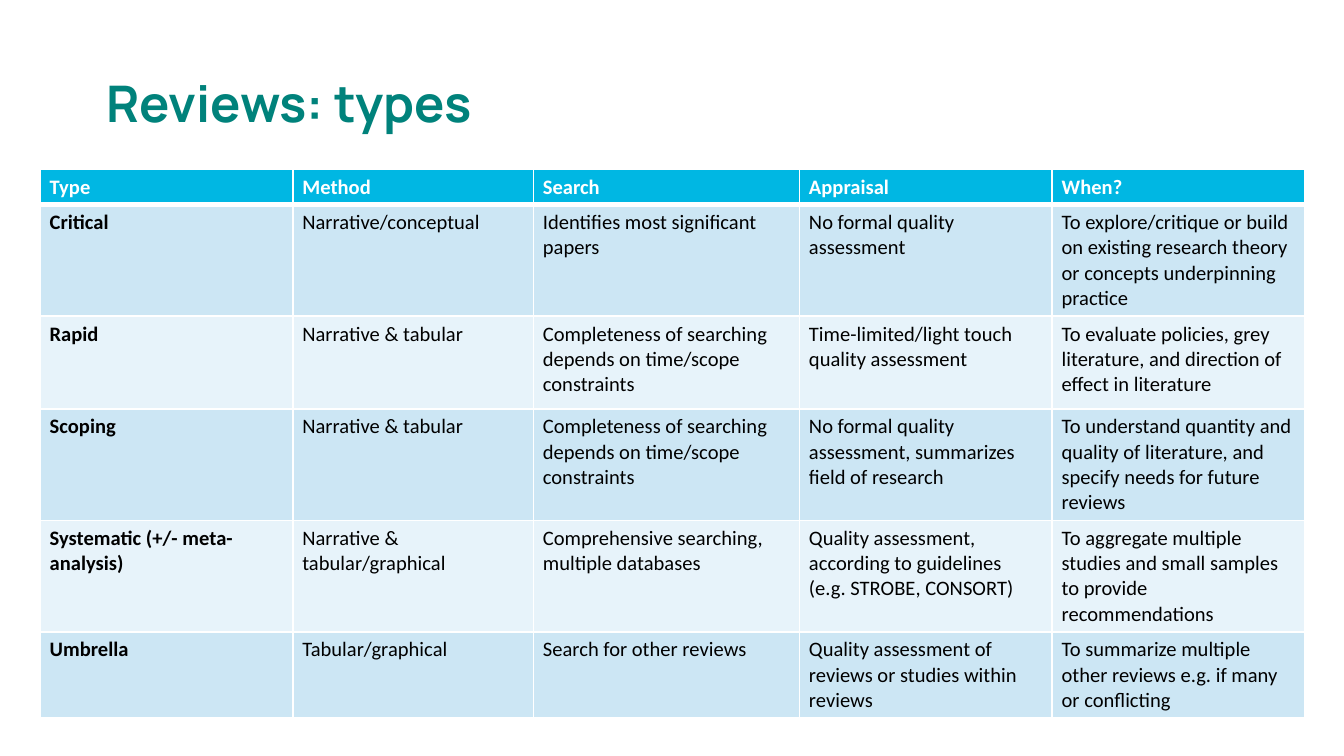
"""Build a slide that compares the types of literature review in a table."""
from dataclasses import dataclass

import pptx
import pptx.dml.color
import pptx.enum.text
import pptx.oxml.ns
import pptx.util
from lxml import etree
from pptx.util import Inches


@dataclass(frozen=True)
class Theme:
    title_font: str = "Manrope"
    table_font: str = "Calibri"
    title_size: float = 27
    table_size: float = 11
    title: str = "00827B"
    header: str = "00B7E3"
    bands: tuple = ("CCE6F4", "E7F3FA")
    light: str = "FFFFFF"
    dark: str = "000000"
    thin: float = 1
    thick: float = 3


THEME = Theme()
SLIDE_WIDTH = 10
SLIDE_HEIGHT = SLIDE_WIDTH * 9 / 16
COLUMN_WIDTHS = (1.88, 1.79, 1.98, 1.88, 1.88)
ROW_HEIGHTS = (0.25, 0.78, 0.69, 0.78, 0.82, 0.6)
SIDE_MARGIN = Inches(0.07)
END_MARGIN = pptx.util.Pt(2.7)
REVIEWS = (
    ("Type", "Method", "Search", "Appraisal", "When?"),
    ("Critical", "Narrative/conceptual", "Identifies most significant papers",
     "No formal quality assessment",
     "To explore/critique or build on existing research theory or concepts underpinning practice"),
    ("Rapid", "Narrative & tabular",
     "Completeness of searching depends on time/scope constraints",
     "Time-limited/light touch quality assessment",
     "To evaluate policies, grey literature, and direction of effect in literature"),
    ("Scoping", "Narrative & tabular",
     "Completeness of searching depends on time/scope constraints",
     "No formal quality assessment, summarizes field of research",
     "To understand quantity and quality of literature, and specify needs for future reviews"),
    ("Systematic (+/- meta-analysis)", "Narrative & tabular/graphical",
     "Comprehensive searching, multiple databases",
     "Quality assessment, according to guidelines (e.g. STROBE, CONSORT)",
     "To aggregate multiple studies and small samples to provide recommendations"),
    ("Umbrella", "Tabular/graphical", "Search for other reviews",
     "Quality assessment of reviews or studies within reviews",
     "To summarize multiple other reviews e.g. if many or conflicting"),
)


def set_attributes(target, values):
    for name, value in values.items():
        setattr(target, name, value)


def rgb(color):
    return pptx.dml.color.RGBColor.from_string(color)


def format_font(font, name, size, color, bold):
    set_attributes(font, {"name": name, "size": pptx.util.Pt(size), "bold": bold})
    font.color.rgb = rgb(color)


def add_title(slide, text):
    title = slide.shapes.title
    set_attributes(title, {"left": Inches(0.69), "top": Inches(0.45),
                           "width": Inches(8.62), "height": Inches(0.68)})
    frame = title.text_frame
    set_attributes(frame, {"text": text, "word_wrap": True,
                           "auto_size": pptx.enum.text.MSO_AUTO_SIZE.NONE,
                           "vertical_anchor": pptx.enum.text.MSO_ANCHOR.MIDDLE})
    paragraph = frame.paragraphs[0]
    set_attributes(paragraph, {"alignment": pptx.enum.text.PP_ALIGN.LEFT, "line_spacing": 0.9})
    format_font(paragraph.runs[0].font, THEME.title_font, THEME.title_size, THEME.title, True)


def add_borders(cell, widths):
    properties = cell._tc.get_or_add_tcPr()
    qualified = pptx.oxml.ns.qn
    for side, width in widths.items():
        line = etree.SubElement(properties, qualified(f"a:ln{side}"), w=str(pptx.util.Pt(width)))
        fill = etree.SubElement(line, qualified("a:solidFill"))
        etree.SubElement(fill, qualified("a:srgbClr"), val=THEME.light)


def format_cell(cell, text, row, column):
    is_header = row == 0
    set_attributes(cell, {"text": text,
                          "margin_left": SIDE_MARGIN, "margin_right": SIDE_MARGIN,
                          "margin_top": END_MARGIN, "margin_bottom": END_MARGIN})
    add_borders(cell, {"L": THEME.thin, "R": THEME.thin,
                       "T": THEME.thick if row == 1 else THEME.thin,
                       "B": THEME.thick if is_header else THEME.thin})
    cell.fill.solid()
    cell.fill.fore_color.rgb = rgb(THEME.header if is_header else THEME.bands[(row - 1) % 2])
    format_font(cell.text_frame.paragraphs[0].runs[0].font, THEME.table_font, THEME.table_size,
                THEME.light if is_header else THEME.dark, is_header or column == 0)


def add_review_table(slide):
    table = slide.shapes.add_table(
        len(REVIEWS), len(COLUMN_WIDTHS), Inches(0.3), Inches(1.26),
        Inches(sum(COLUMN_WIDTHS)), Inches(sum(ROW_HEIGHTS))).table
    for column, width in zip(table.columns, COLUMN_WIDTHS):
        column.width = Inches(width)
    for row, height in zip(table.rows, ROW_HEIGHTS):
        row.height = Inches(height)
    for row, texts in enumerate(REVIEWS):
        for column, text in enumerate(texts):
            format_cell(table.cell(row, column), text, row, column)


def main():
    presentation = pptx.Presentation()
    set_attributes(presentation, {"slide_width": Inches(SLIDE_WIDTH),
                                  "slide_height": Inches(SLIDE_HEIGHT)})
    slide = presentation.slides.add_slide(presentation.slide_layouts.get_by_name("Title Only"))
    add_title(slide, "Reviews: types")
    add_review_table(slide)
    presentation.save("out.pptx")


if __name__ == "__main__":
    main()
